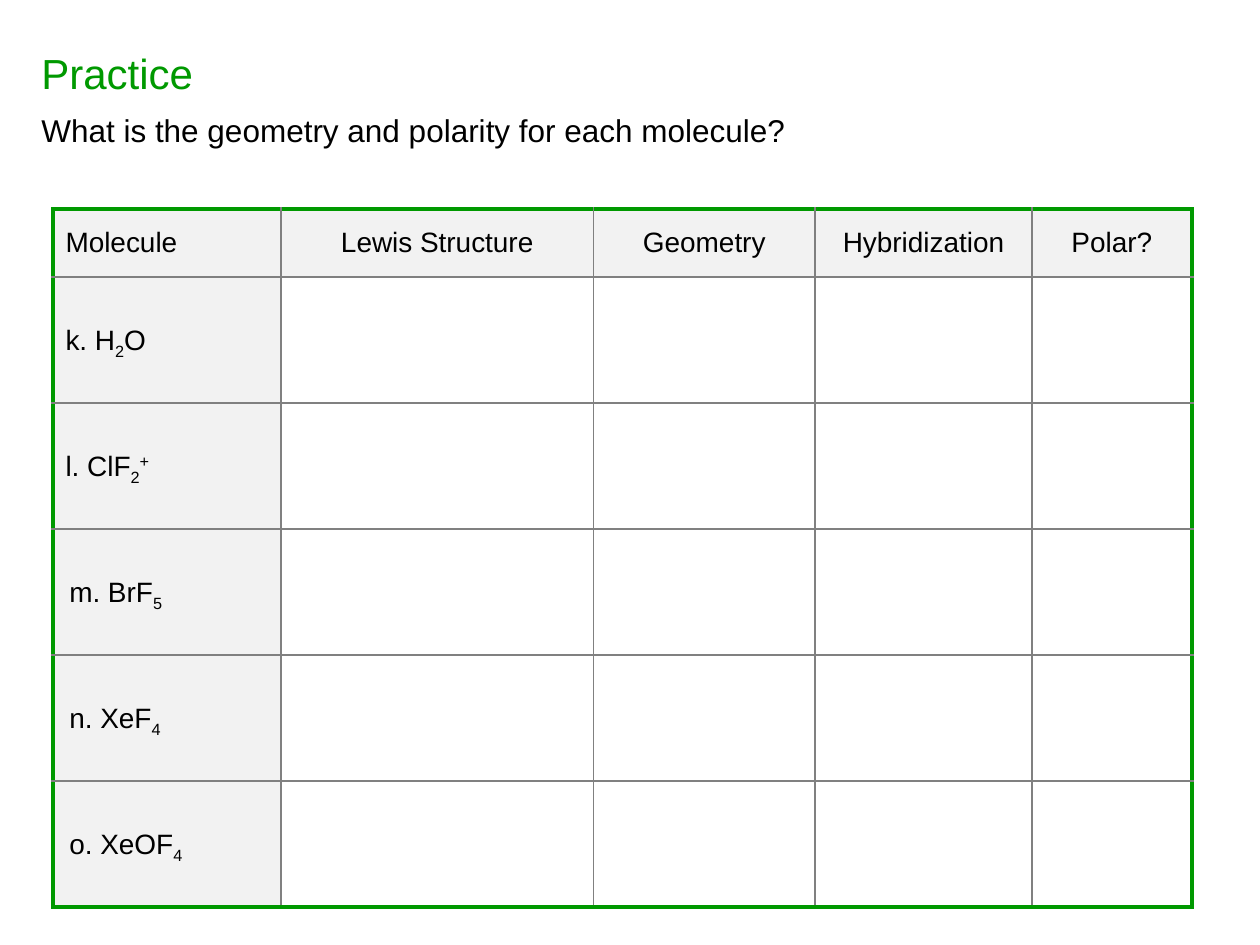
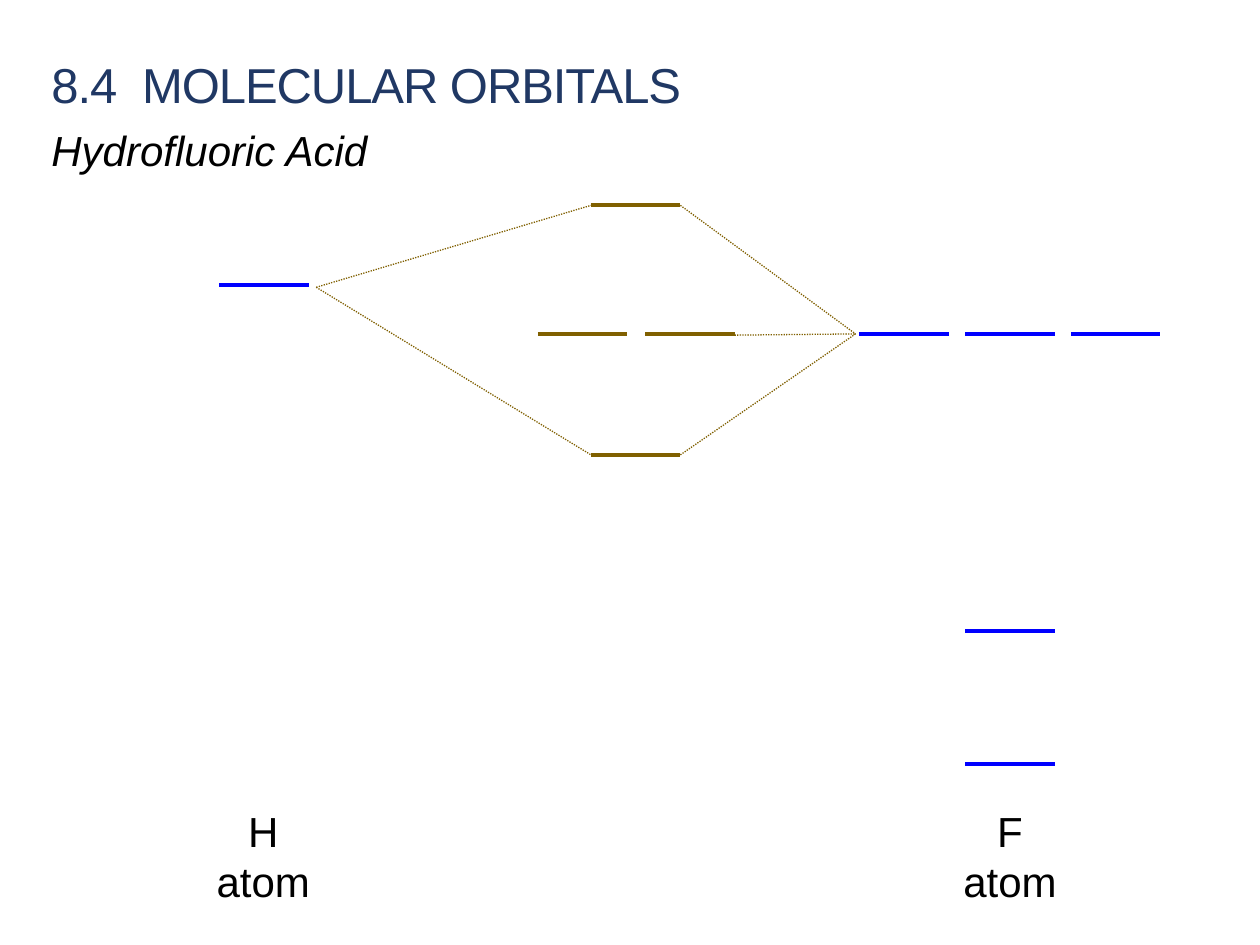
from dataclasses import dataclass

from pptx import Presentation
from pptx.dml.color import RGBColor
from pptx.enum.dml import MSO_LINE
from pptx.enum.shapes import MSO_CONNECTOR
from pptx.enum.text import MSO_ANCHOR, PP_ALIGN
from pptx.oxml.ns import qn
from pptx.slide import Slide
from pptx.table import _Cell as Cell
from pptx.util import Inches, Pt
from lxml.etree import SubElement

COLORS = {
    "green": "009900",
    "navy": "203864",
    "text": "000000",
    "grid": "808080",
    "label": "F2F2F2",
    "atom": "0000FF",
    "molecule": "806000",
}
FONT = "Arial"
SUBSCRIPT, SUPERSCRIPT = -25, 30
LEVEL_WIDTH = 0.71


@dataclass(frozen=True)
class TextSpec:
    text: str
    left: float
    top: float
    width: float
    height: float
    size: float
    color: str = "text"
    italic: bool = False
    centered: bool = False
    wrap: bool = True
    spacing: float = 0
    tab: float = 0


@dataclass(frozen=True)
class Molecule:
    runs: tuple[tuple[str, int], ...]
    indent: float


@dataclass(frozen=True)
class Level:
    left: float
    top: float
    color: str


@dataclass(frozen=True)
class Link:
    start: tuple[float, float]
    end: tuple[float, float]


def rgb(name: str) -> RGBColor:
    return RGBColor.from_string(COLORS[name])


def add_run(paragraph, text: str, size: float, color: str = "text", italic: bool = False,
            baseline: int = 0, spacing: float = 0) -> None:
    run = paragraph.add_run()
    run.text = text
    run.font.name = FONT
    run.font.size = Pt(size)
    run.font.italic = italic
    run.font.color.rgb = rgb(color)
    properties = run.font._element
    if baseline:
        properties.set("baseline", str(baseline * 1000))
    if spacing:
        properties.set("spc", str(round(spacing * 100)))


def add_text(slide: Slide, spec: TextSpec) -> None:
    box = slide.shapes.add_textbox(Inches(spec.left), Inches(spec.top),
                                   Inches(spec.width), Inches(spec.height))
    box.text_frame.word_wrap = spec.wrap
    paragraph = box.text_frame.paragraphs[0]
    paragraph.alignment = PP_ALIGN.CENTER if spec.centered else PP_ALIGN.LEFT
    if spec.tab:
        tabs = SubElement(paragraph._p.get_or_add_pPr(), qn("a:tabLst"))
        SubElement(tabs, qn("a:tab"), pos=str(Inches(spec.tab)), algn="l")
    add_run(paragraph, spec.text, spec.size, spec.color, spec.italic, spacing=spec.spacing)


def set_border(cell: Cell, side: str, outer: bool) -> None:
    color, width = ("green", 2.25) if outer else ("grid", 1)
    line = SubElement(cell._tc.get_or_add_tcPr(), qn(f"a:ln{side}"), w=str(Pt(width)))
    fill = SubElement(line, qn("a:solidFill"))
    SubElement(fill, qn("a:srgbClr"), val=COLORS[color])


def add_molecule_table(slide: Slide, headers: list[str], widths: list[float],
                       molecules: list[Molecule]) -> None:
    heights = [0.54] + [1.0] * len(molecules)
    frame = slide.shapes.add_table(len(heights), len(widths), Inches(0.42), Inches(1.66),
                                   Inches(sum(widths)), Inches(sum(heights)))
    table = frame.table
    table.first_row = False
    table.horz_banding = False
    for column, width in zip(table.columns, widths):
        column.width = Inches(width)
    last_row, last_column = len(heights) - 1, len(widths) - 1
    for row_index, height in enumerate(heights):
        table.rows[row_index].height = Inches(height)
        for column_index in range(len(widths)):
            cell = table.cell(row_index, column_index)
            set_border(cell, "L", column_index == 0)
            set_border(cell, "R", column_index == last_column)
            set_border(cell, "T", row_index == 0)
            set_border(cell, "B", row_index == last_row)
            cell.vertical_anchor = MSO_ANCHOR.MIDDLE
            if row_index == 0 or column_index == 0:
                cell.fill.solid()
                cell.fill.fore_color.rgb = rgb("label")
            else:
                cell.fill.background()
    for column_index, header in enumerate(headers):
        paragraph = table.cell(0, column_index).text_frame.paragraphs[0]
        paragraph.alignment = PP_ALIGN.CENTER if column_index else PP_ALIGN.LEFT
        add_run(paragraph, header, 16)
    for row_index, molecule in enumerate(molecules, start=1):
        cell = table.cell(row_index, 0)
        cell.margin_left = Inches(molecule.indent)
        cell.margin_top = cell.margin_bottom = Inches(0)
        paragraph = cell.text_frame.paragraphs[0]
        paragraph.line_spacing = 1.15
        for text, baseline in molecule.runs:
            add_run(paragraph, text, 16, baseline=baseline)


def add_line(slide: Slide, start: tuple[float, float], end: tuple[float, float],
             color: str, width: float, dotted: bool = False) -> None:
    connector = slide.shapes.add_connector(
        MSO_CONNECTOR.STRAIGHT, Inches(start[0]), Inches(start[1]),
        Inches(end[0]), Inches(end[1]))
    connector.line.color.rgb = rgb(color)
    connector.line.width = Pt(width)
    if dotted:
        connector.line.dash_style = MSO_LINE.ROUND_DOT
    SubElement(connector._element.spPr, qn("a:effectLst"))


def add_level(slide: Slide, level: Level) -> None:
    add_line(slide, (level.left, level.top), (level.left + LEVEL_WIDTH, level.top),
             level.color, 2.25)


def add_link(slide: Slide, link: Link) -> None:
    add_line(slide, link.start, link.end, "molecule", 0.75, dotted=True)


def build_practice(slide: Slide) -> None:
    add_text(slide, TextSpec("Practice", 0.23, 0.33, 1.42, 0.5, 24, "green", wrap=False))
    add_molecule_table(
        slide,
        ["Molecule", "Lewis Structure", "Geometry", "Hybridization", "Polar?"],
        [1.81, 2.48, 1.76, 1.72, 1.27],
        [
            Molecule((("k. H", 0), ("2", SUBSCRIPT), ("O", 0)), 0.1),
            Molecule((("l. ClF", 0), ("2", SUBSCRIPT), ("+", SUPERSCRIPT)), 0.1),
            Molecule((("m. BrF", 0), ("5", SUBSCRIPT)), 0.13),
            Molecule((("n. XeF", 0), ("4", SUBSCRIPT)), 0.13),
            Molecule((("o. XeOF", 0), ("4", SUBSCRIPT)), 0.13),
        ])
    add_text(slide, TextSpec("What is the geometry and polarity for each molecule?",
                             0.23, 0.83, 9.57, 0.4, 18))


def build_orbitals(slide: Slide) -> None:
    add_text(slide, TextSpec("8.4\tMOLECULAR ORBITALS", 0.31, 0.38, 9.33, 0.57, 28, "navy",
                             spacing=-0.6, tab=0.72))
    add_text(slide, TextSpec("Hydrofluoric Acid", 0.31, 0.94, 2.74, 0.5, 24,
                             italic=True, wrap=False))

    hydrogen = (2.51, 2.28)
    fluorine = (6.79, 2.65)
    center_left, antibonding, nonbonding, bonding = 4.69, 1.63, 2.65, 3.61
    center_right = center_left + LEVEL_WIDTH
    fluorine_left = 7.66
    levels = [
        Level(1.74, 2.26, "atom"),
        Level(center_left, antibonding, "molecule"),
        Level(center_left, bonding, "molecule"),
        *[Level(left, nonbonding, "molecule") for left in (4.27, 5.12)],
        *[Level(fluorine_left + step * 0.84, nonbonding, "atom") for step in (-1, 0, 1)],
        *[Level(fluorine_left, top, "atom") for top in (5.01, 6.06)],
    ]
    links = [
        Link(hydrogen, (center_left, antibonding)),
        Link(hydrogen, (center_left, bonding)),
        Link((center_right, antibonding), fluorine),
        Link((5.83, 2.66), fluorine),
        Link((center_right, bonding), fluorine),
    ]
    for level in levels:
        add_level(slide, level)
    for link in links:
        add_link(slide, link)
    for atom, left, width in (("H", 1.54, 1.1), ("F", 7.49, 1.05)):
        add_text(slide, TextSpec(f"{atom} atom", left, 6.34, width, 0.46, 24, centered=True))


def main() -> None:
    presentation = Presentation()
    presentation.slide_width = Inches(10)
    presentation.slide_height = Inches(7.5)
    blank = presentation.slide_layouts[6]
    for build in (build_practice, build_orbitals):
        build(presentation.slides.add_slide(blank))
    presentation.save("out.pptx")


if __name__ == "__main__":
    main()
